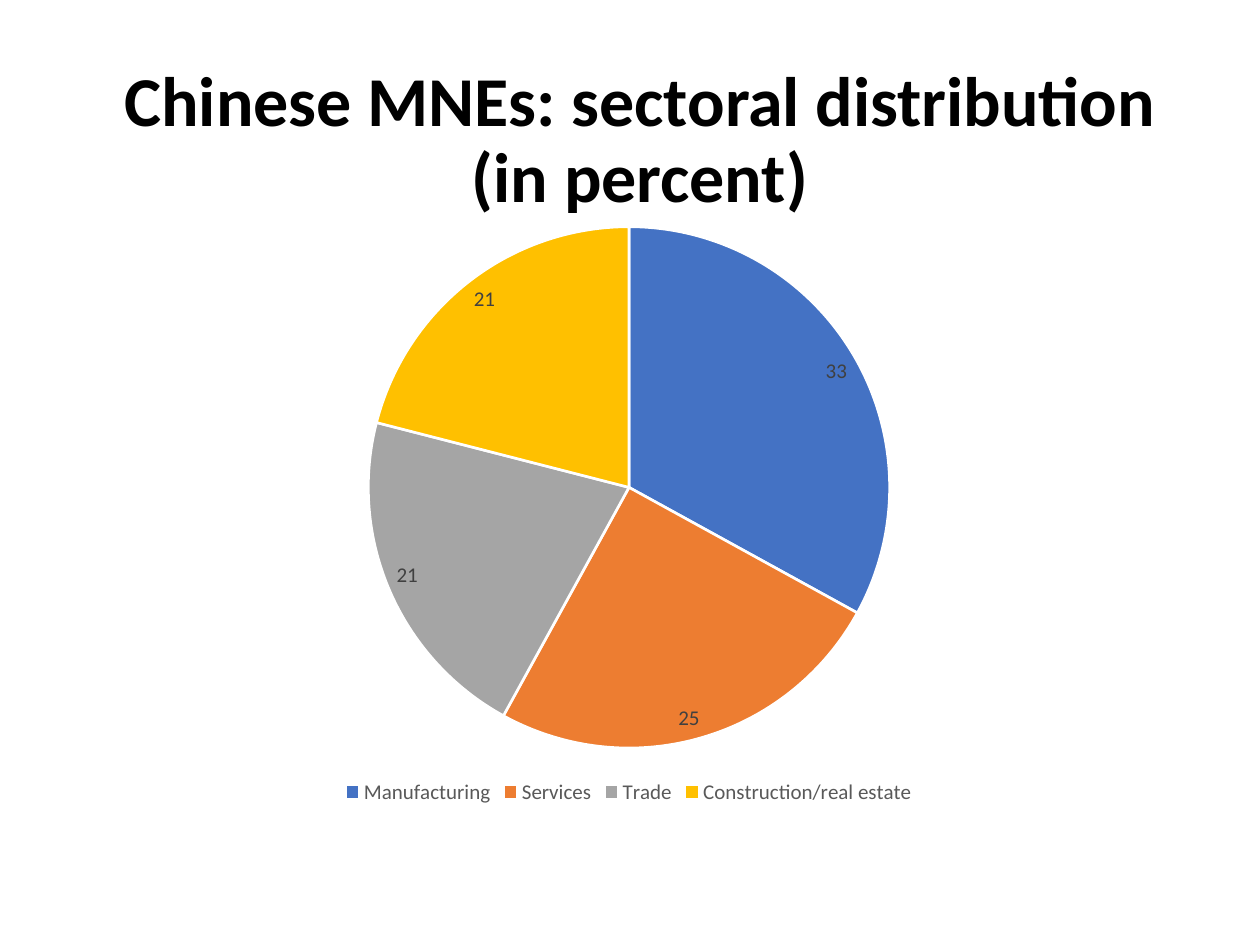
from dataclasses import dataclass

from pptx import Presentation
from pptx.chart.data import CategoryChartData
from pptx.dml.color import RGBColor
from pptx.enum.chart import XL_CHART_TYPE, XL_LABEL_POSITION, XL_LEGEND_POSITION
from pptx.enum.text import MSO_ANCHOR, MSO_AUTO_SIZE, PP_ALIGN
from pptx.util import Cm, Pt


@dataclass(frozen=True)
class Theme:
    face: str = "Calibri"
    ink: RGBColor = RGBColor(0, 0, 0)
    label: RGBColor = RGBColor(0x40, 0x40, 0x40)
    legend: RGBColor = RGBColor(0x59, 0x59, 0x59)
    edge: RGBColor = RGBColor(255, 255, 255)
    head: Pt = Pt(40)
    note: Pt = Pt(12)
    base: Pt = Pt(10)


THEME = Theme()

# Each sector with its share in percent and its slice colour
SECTORS = [
    ("Manufacturing", 33, "4472C4"),
    ("Services", 25, "ED7D31"),
    ("Trade", 21, "A5A5A5"),
    ("Construction/real estate", 21, "FFC000"),
]


def apply(item, form):
    for name, value in form.items():
        setattr(item, name, value)


def style(font, size, color, bold=False):
    apply(font, {"name": THEME.face, "size": size, "bold": bold})
    font.color.rgb = color


def add_title(slide, text, box):
    title = slide.shapes.title
    apply(title, box)
    frame = title.text_frame
    frame.text = text
    apply(frame, {
        "word_wrap": True,
        "auto_size": MSO_AUTO_SIZE.NONE,
        "vertical_anchor": MSO_ANCHOR.MIDDLE,
    })
    para = frame.paragraphs[0]
    apply(para, {"alignment": PP_ALIGN.CENTER, "line_spacing": 0.9})
    style(para.runs[0].font, THEME.head, THEME.ink, True)


def add_pie(slide, sectors, box):
    names, shares, colors = zip(*sectors)
    data = CategoryChartData()
    data.categories = names
    data.add_series("Series 1", shares)
    chart = slide.shapes.add_chart(
        XL_CHART_TYPE.PIE, *box.values(), data).chart
    apply(chart, {"has_title": False, "has_legend": True})
    style(chart.font, THEME.base, THEME.ink)

    # Legend
    apply(chart.legend, {
        "position": XL_LEGEND_POSITION.BOTTOM,
        "include_in_layout": False,
    })
    style(chart.legend.font, THEME.note, THEME.legend)

    # Slices
    plot = chart.plots[0]
    plot.vary_by_categories = True
    for index, color in enumerate(colors):
        part = plot.series[0].points[index].format
        part.fill.solid()
        part.fill.fore_color.rgb = RGBColor.from_string(color)
        part.line.color.rgb = THEME.edge
        part.line.width = Pt(1.5)

    # Value labels
    labels = plot.series[0].data_labels
    apply(labels, {
        "show_value": True,
        "show_percentage": False,
        "show_legend_key": False,
        "position": XL_LABEL_POSITION.INSIDE_END,
    })
    style(labels.font, THEME.note, THEME.label)


def main():
    deck = Presentation()
    apply(deck, {"slide_width": Cm(25.4), "slide_height": Cm(19.05)})
    slide = deck.slides.add_slide(deck.slide_layouts.get_by_name("Title Only"))
    add_title(slide, "Chinese MNEs: sectoral distribution (in percent)", {
        "left": Cm(1.75), "top": Cm(1.02),
        "width": Cm(22.3), "height": Cm(3.68),
    })
    add_pie(slide, SECTORS, {
        "left": Cm(1.73), "top": Cm(4.22),
        "width": Cm(21.9), "height": Cm(12.1),
    })
    deck.save("out.pptx")


if __name__ == "__main__":
    main()
